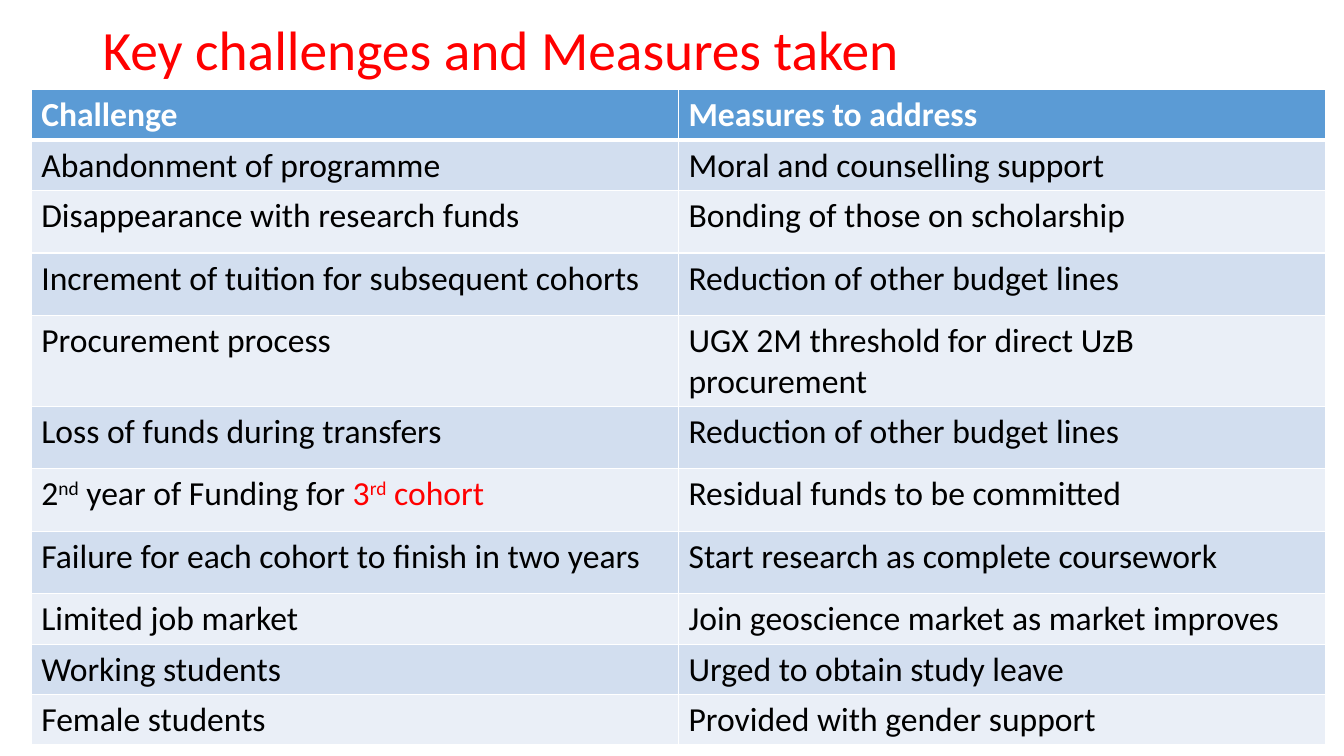
from lxml import etree
from pptx import Presentation
from pptx.dml.color import RGBColor
from pptx.enum.text import MSO_ANCHOR
from pptx.oxml.ns import qn
from pptx.util import Inches, Pt

MIDDLE = MSO_ANCHOR.MIDDLE
WIDTH, HEIGHT = 13.33, 7.5
SHORT, TALL = 0.5, 0.62  # row heights
RED, BLACK, WHITE = "FF0000", "000000", "FFFFFF"
HEADER_FILL, BAND_FILLS = "5B9BD5", ("EAEFF7", "D2DEEF")

HEADINGS = ("Challenge", "Measures to address")
# Each row: challenge, measure, height; a list holds (text, colour, raised) runs
ROWS = [
    ("Abandonment of programme", "Moral and counselling support", SHORT),
    ("Disappearance with research funds", "Bonding of those on scholarship", TALL),
    ("Increment of tuition for subsequent cohorts", "Reduction of other budget lines", TALL),
    ("Procurement process", "UGX 2M threshold for direct UzB procurement", TALL),
    ("Loss of funds during transfers", "Reduction of other budget lines", TALL),
    ([("2", BLACK, False), ("nd", BLACK, True), (" year of Funding for ", BLACK, False),
      ("3", RED, False), ("rd", RED, True), (" cohort", RED, False)],
     "Residual funds to be committed", TALL),
    ("Failure for each cohort to finish in two years", "Start research as complete coursework", TALL),
    ("Limited job market", "Join geoscience market as market improves", SHORT),
    ("Working students", "Urged to obtain study leave", SHORT),
    ("Female students", "Provided with gender support", SHORT),
]


def rgb(value):
    return RGBColor.from_string(value)


class SlideBuilder:
    """Holds the text style and the current slide; lengths are shares of the slide."""

    def __init__(self, prs, font="Calibri", size=24):
        self.prs, self.font, self.size = prs, font, size
        self.slide = prs.slides.add_slide(prs.slide_layouts[6])

    def box(self, x, y, w, h):
        sw, sh = self.prs.slide_width, self.prs.slide_height
        return int(x * sw), int(y * sh), int(w * sw), int(h * sh)

    def style(self, r, color, size=None, bold=False):
        r.font.name, r.font.size, r.font.bold = self.font, Pt(size or self.size), bold
        r.font.color.rgb = rgb(color)

    def title(self, text, box, size, color):
        tf = self.slide.shapes.add_textbox(*self.box(*box)).text_frame
        tf.word_wrap, tf.vertical_anchor = True, MIDDLE
        tf.text = text
        p = tf.paragraphs[0]
        p.line_spacing = 0.9
        self.style(p.runs[0], color, size)

    def borders(self, cell, bottom):
        tc_pr = cell._tc.get_or_add_tcPr()
        for side, width in (("L", 1), ("R", 1), ("T", 1), ("B", bottom)):
            ln = etree.SubElement(tc_pr, qn(f"a:ln{side}"), w=str(Pt(width)))
            fill = etree.SubElement(ln, qn("a:solidFill"))
            etree.SubElement(fill, qn("a:srgbClr"), val=WHITE)

    def cell(self, cell, content, fill, color, bold=False, bottom=1):
        self.borders(cell, bottom)
        cell.fill.solid()
        cell.fill.fore_color.rgb = rgb(fill)
        runs = [(content, color, False)] if isinstance(content, str) else content
        for text, run_color, raised in runs:
            r = cell.text_frame.paragraphs[0].add_run()
            r.text = text
            self.style(r, run_color, bold=bold)
            if raised:
                r._r.get_or_add_rPr().set("baseline", "30000")

    def table(self, headings, rows, box):
        table = self.slide.shapes.add_table(len(rows) + 1, len(headings), *self.box(*box)).table
        table.rows[0].height = Inches(SHORT)
        for c, heading in enumerate(headings):
            self.cell(table.cell(0, c), heading, HEADER_FILL, WHITE, bold=True, bottom=3)
        for i, (*contents, height) in enumerate(rows, start=1):
            table.rows[i].height = Inches(height)
            for c, content in enumerate(contents):
                self.cell(table.cell(i, c), content, BAND_FILLS[i % 2], BLACK)


def main():
    prs = Presentation()
    prs.slide_width, prs.slide_height = Inches(WIDTH), Inches(HEIGHT)
    s = SlideBuilder(prs)

    # Title
    s.title("Key challenges and Measures taken",
            (0.92 / WIDTH, 0.17 / HEIGHT, 11.5 / WIDTH, 0.71 / HEIGHT), 39.6, RED)

    # Challenges and measures
    s.table(HEADINGS, ROWS, (0.31 / WIDTH, 0.89 / HEIGHT, 12.84 / WIDTH, 6.24 / HEIGHT))

    prs.save("out.pptx")


if __name__ == "__main__":
    main()
